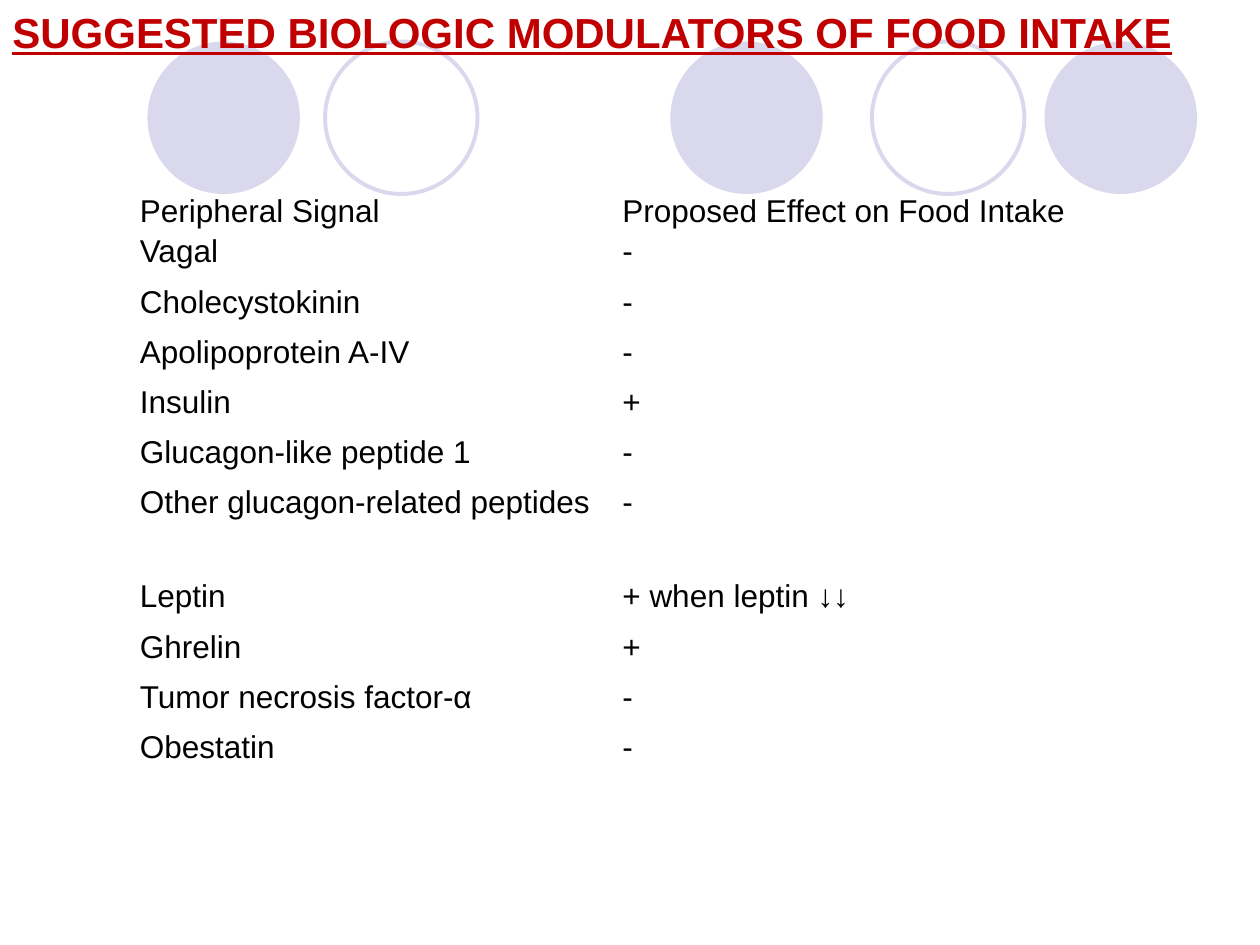
from lxml import etree
from pptx import Presentation
from pptx.dml.color import RGBColor
from pptx.enum.shapes import MSO_SHAPE
from pptx.enum.text import MSO_ANCHOR, MSO_AUTO_SIZE
from pptx.oxml.ns import qn
from pptx.util import Inches, Pt

OVAL = MSO_SHAPE.OVAL
TOP, MIDDLE, BOTTOM = MSO_ANCHOR.TOP, MSO_ANCHOR.MIDDLE, MSO_ANCHOR.BOTTOM
FIT_SHAPE = MSO_AUTO_SIZE.SHAPE_TO_FIT_TEXT

LAVENDER = RGBColor(0xD9, 0xD8, 0xEC)
RED = RGBColor(0xC0, 0x00, 0x00)
BLACK = RGBColor(0x00, 0x00, 0x00)
FONT = "Arial"

TITLE = "SUGGESTED BIOLOGIC MODULATORS OF FOOD INTAKE"
CIRCLES = [(5.32, True), (8.29, True), (1.17, True), (6.92, False), (2.58, False)]
ROWS = [
    ("Peripheral Signal", "Proposed Effect on Food Intake"),
    ("Vagal", "-"),
    ("Cholecystokinin", "-"),
    ("Apolipoprotein A-IV", "-"),
    ("Insulin", "+"),
    ("Glucagon-like peptide 1", "-"),
    ("Other glucagon-related peptides", "-"),
    ("Leptin", "+ when leptin ↓↓"),
    ("Ghrelin", "+"),
    ("Tumor necrosis factor-α", "-"),
    ("Obestatin", "-"),
]
TALL_ROWS = {0, 6}
TALL_HEIGHT = 0.75


def style_run(r, size, color, bold=False, underline=False):
    r.font.name = FONT
    r.font.size = Pt(size)
    r.font.color.rgb = color
    r.font.bold = bold
    r.font.underline = underline


def add_circles(s, top, diameter):
    """Draw the row of filled and outlined circles."""
    for left, filled in CIRCLES:
        sp = s.shapes.add_shape(OVAL, Inches(left), Inches(top),
                                Inches(diameter), Inches(diameter))
        sp.shadow.inherit = False
        if filled:
            sp.fill.solid()
            sp.fill.fore_color.rgb = LAVENDER
            sp.line.fill.background()
        else:
            sp.fill.background()
            sp.line.color.rgb = LAVENDER
            sp.line.width = Pt(2.25)


def style_cell(cell, anchor):
    """Make a cell transparent and borderless, with thin margins."""
    tcPr = cell._tc.get_or_add_tcPr()
    for side in ("a:lnL", "a:lnR", "a:lnT", "a:lnB"):
        etree.SubElement(etree.SubElement(tcPr, qn(side)), qn("a:noFill"))
    cell.fill.background()
    cell.vertical_anchor = anchor
    cell.margin_left = cell.margin_right = Inches(0.02)
    cell.margin_top = cell.margin_bottom = Inches(0.02)
    style_run(cell.text_frame.paragraphs[0].runs[0], 18, BLACK)


def add_signal_table(s, left, top, width, height):
    table = s.shapes.add_table(len(ROWS), 2, Inches(left), Inches(top),
                               Inches(width), Inches(height)).table
    table.first_row = table.horz_banding = False
    for column in table.columns:
        column.width = Inches(width / 2)
    row_height = (height - TALL_HEIGHT * len(TALL_ROWS)) / (len(ROWS) - len(TALL_ROWS))
    for i, texts in enumerate(ROWS):
        table.rows[i].height = Inches(TALL_HEIGHT if i in TALL_ROWS else row_height)
        for j, text in enumerate(texts):
            cell = table.cell(i, j)
            cell.text_frame.text = text
            style_cell(cell, BOTTOM if i == 0 else TOP)


def add_title(s, left, top, width, height):
    tf = s.shapes.add_textbox(Inches(left), Inches(top),
                              Inches(width), Inches(height)).text_frame
    tf.word_wrap = False
    tf.auto_size = FIT_SHAPE
    tf.vertical_anchor = MIDDLE
    tf.text = TITLE
    style_run(tf.paragraphs[0].runs[0], 24, RED, bold=True, underline=True)


def main():
    prs = Presentation()
    prs.slide_width, prs.slide_height = Inches(10), Inches(7.5)
    s = prs.slides.add_slide(prs.slide_layouts[6])
    add_circles(s, 0.33, 1.21)
    add_signal_table(s, 1.09, 1.09, 7.66, 5.08)
    add_title(s, 0, 0, 9.49, 0.51)
    prs.save("out.pptx")


if __name__ == "__main__":
    main()
